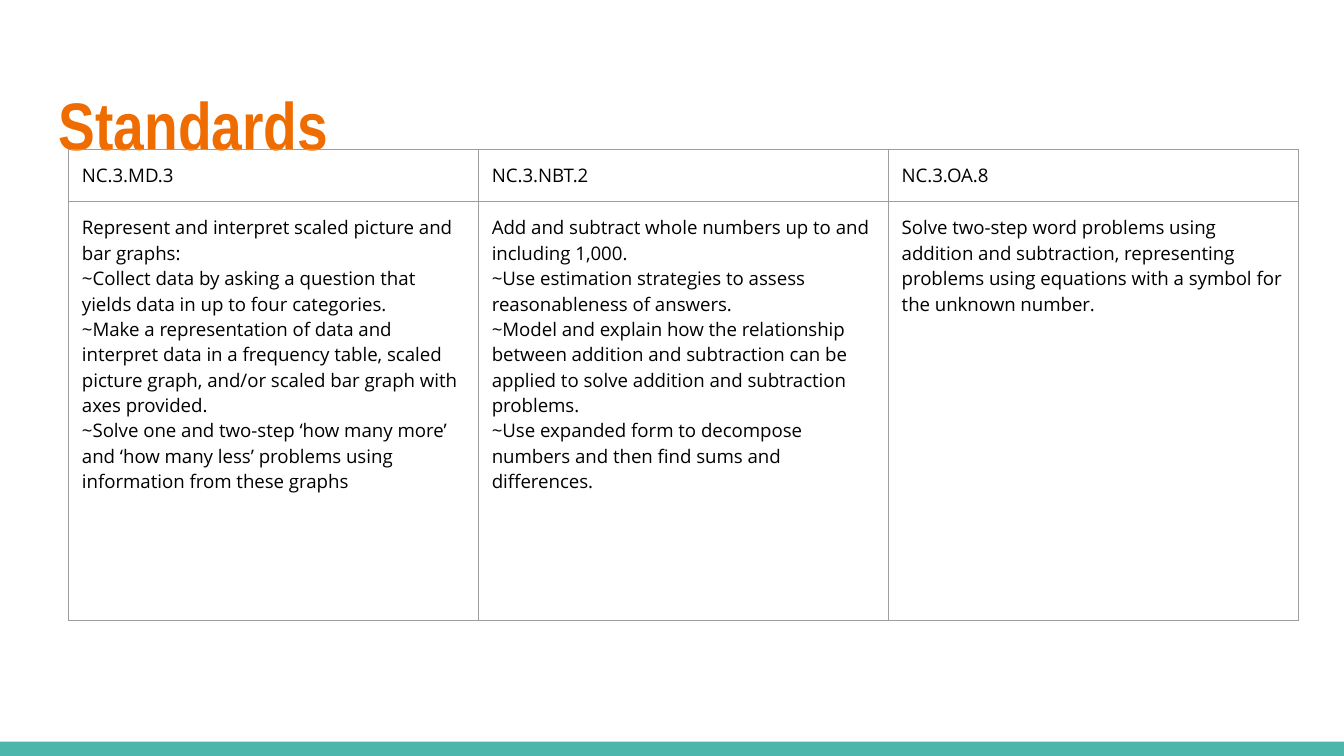
from dataclasses import dataclass

from lxml.etree import SubElement
from pptx import Presentation
from pptx.dml.color import RGBColor
from pptx.enum.shapes import MSO_SHAPE
from pptx.oxml.ns import qn
from pptx.util import Pt


@dataclass(frozen=True)
class Theme:
    background: str = "FFFFFF"
    bar: str = "4DB6AC"
    title: str = "EF6C00"
    body: str = "000000"
    border: str = "9E9E9E"
    title_font: str = "Arial Narrow"
    body_font: str = "Open Sans"
    title_size: float = 36
    body_size: float = 10
    border_width: float = 0.75
    inset: float = 7.2


theme = Theme()


def write_text(frame, text, *, font, size, color, bold=False):
    frame.word_wrap = True
    frame.text = text
    for paragraph in frame.paragraphs:
        for run in paragraph.runs:
            run.font.name = font
            run.font.size = Pt(size)
            run.font.bold = bold
            run.font.color.rgb = RGBColor.from_string(color)


def set_borders(cell, color, width):
    properties = cell._tc.get_or_add_tcPr()
    for position, side in enumerate(("lnL", "lnR", "lnT", "lnB")):
        line = SubElement(properties, qn(f"a:{side}"), w=str(Pt(width)))
        fill = SubElement(line, qn("a:solidFill"))
        SubElement(fill, qn("a:srgbClr"), val=color)
        properties.insert(position, line)


presentation = Presentation()
presentation.slide_width = Pt(720)
presentation.slide_height = Pt(405)
slide = presentation.slides.add_slide(presentation.slide_layouts[6])
slide.background.fill.solid()
slide.background.fill.fore_color.rgb = RGBColor.from_string(theme.background)

bar = slide.shapes.add_shape(MSO_SHAPE.RECTANGLE, Pt(0), Pt(397.4), Pt(720), Pt(7.6))
bar.shadow.inherit = False
bar.fill.solid()
bar.fill.fore_color.rgb = RGBColor.from_string(theme.bar)
bar.line.fill.background()

title = slide.shapes.add_textbox(Pt(24.5), Pt(37.5), Pt(671), Pt(55.4))
title_frame = title.text_frame
title_frame.margin_left = title_frame.margin_right = Pt(theme.inset)
title_frame.margin_top = title_frame.margin_bottom = Pt(theme.inset)
write_text(title_frame, "Standards", font=theme.title_font,
           size=theme.title_size, color=theme.title, bold=True)

standards = {
    "NC.3.MD.3": [
        "Represent and interpret scaled picture and bar graphs:",
        "~Collect data by asking a question that yields data in up to four categories.",
        "~Make a representation of data and interpret data in a frequency table, "
        "scaled picture graph, and/or scaled bar graph with axes provided.",
        "~Solve one and two-step ‘how many more’ and ‘how many less’ problems "
        "using information from these graphs",
    ],
    "NC.3.NBT.2": [
        "Add and subtract whole numbers up to and including 1,000.",
        "~Use estimation strategies to assess reasonableness of answers.",
        "~Model and explain how the relationship between addition and subtraction "
        "can be applied to solve addition and subtraction problems.",
        "~Use expanded form to decompose numbers and then find sums and differences.",
    ],
    "NC.3.OA.8": [
        "Solve two-step word problems using addition and subtraction, representing "
        "problems using equations with a symbol for the unknown number.",
    ],
}

row_heights = (27.9, 224.4)
table_shape = slide.shapes.add_table(len(row_heights), len(standards), Pt(36.7), Pt(80.1),
                                     Pt(658.8), Pt(sum(row_heights)))
table = table_shape.table
table.first_row = False
table.horz_banding = False
for row, height in zip(table.rows, row_heights):
    row.height = Pt(height)

for column, (code, descriptions) in enumerate(standards.items()):
    for row, text in enumerate((code, "\n".join(descriptions))):
        cell = table.cell(row, column)
        cell.fill.background()
        cell.margin_left = cell.margin_right = Pt(theme.inset)
        cell.margin_top = cell.margin_bottom = Pt(theme.inset)
        write_text(cell.text_frame, text, font=theme.body_font,
                   size=theme.body_size, color=theme.body)
        set_borders(cell, theme.border, theme.border_width)

presentation.save("out.pptx")
